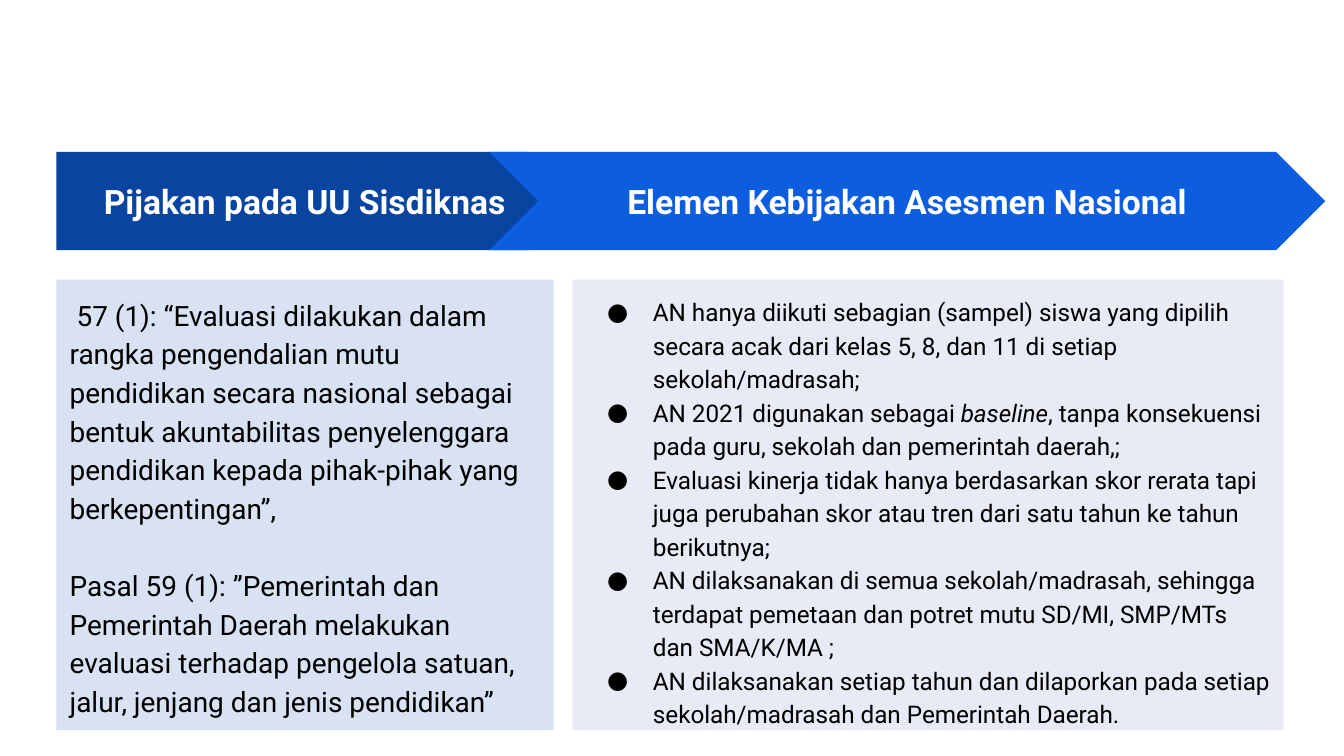
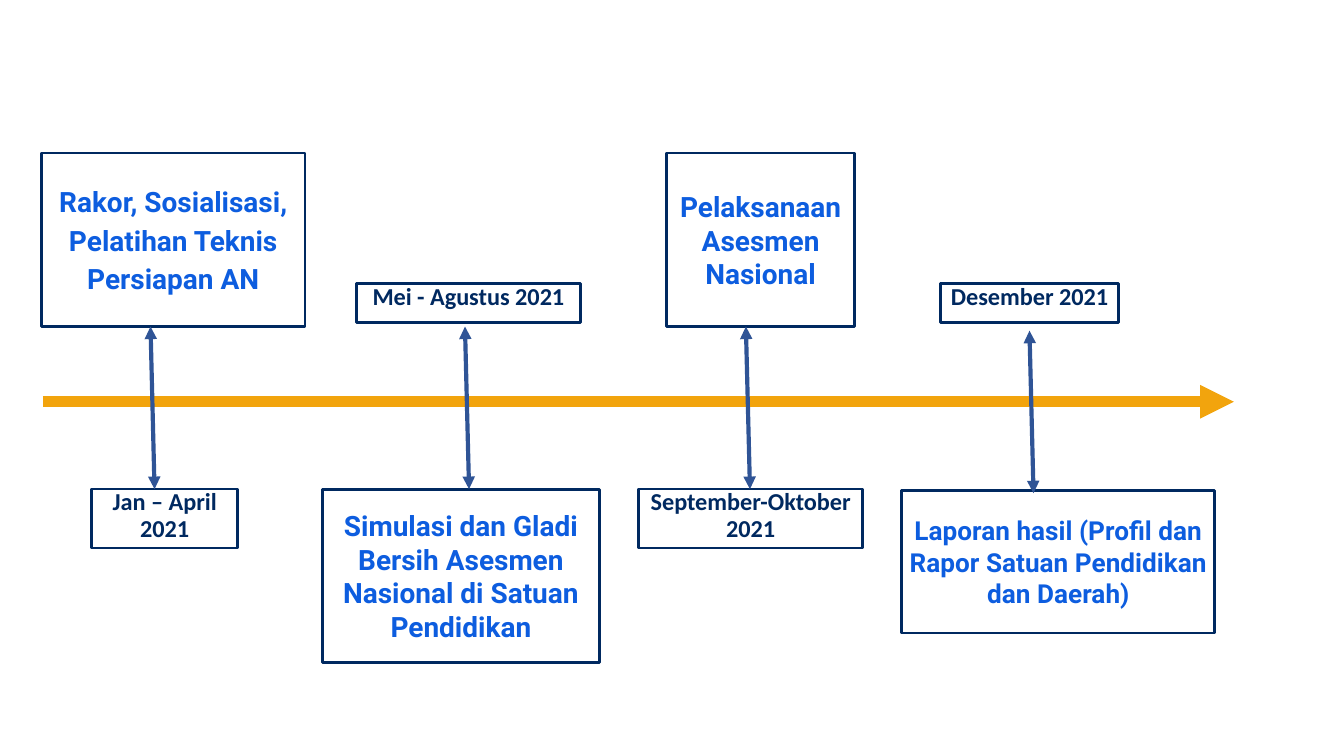
import lxml.etree
import pptx
import pptx.dml.color
import pptx.enum.shapes
import pptx.enum.text
import pptx.oxml.ns
import pptx.util

RGB = pptx.dml.color.RGBColor
WHITE = RGB(0xFF, 0xFF, 0xFF)
BLACK = RGB(0x00, 0x00, 0x00)
BLUE = RGB(0x0D, 0x5D, 0xDF)
DARK_BLUE = RGB(0x09, 0x44, 0xA1)
PALE_BLUE = RGB(0xD8, 0xE2, 0xF3)
PALE_LILAC = RGB(0xE8, 0xEB, 0xF5)
NAVY = RGB(0x00, 0x29, 0x60)
STEEL = RGB(0x2F, 0x54, 0x96)
AMBER = RGB(0xF2, 0xA4, 0x0D)

SHAPE = pptx.enum.shapes.MSO_SHAPE
ALIGN = pptx.enum.text.PP_ALIGN
ANCHOR = pptx.enum.text.MSO_ANCHOR
Pt = pptx.util.Pt
qn = pptx.oxml.ns.qn

prs = pptx.Presentation()
prs.slide_width = pptx.util.Inches(10)
prs.slide_height = prs.slide_width * 9 // 16
blank = prs.slide_layouts[6]

# All positions are in hundredths of the slide's width and height
COL = prs.slide_width / 100
ROW = prs.slide_height / 100


def add_box(s, kind, at, text, size, color, font="Roboto", bold=True, fill=None,
            line=None, inset=0.0, anchor=ANCHOR.MIDDLE, align=ALIGN.CENTER,
            spacing=None, before=0):
    """Add a shape with text; words between asterisks are italic."""
    x, y, w, h = at
    sp = s.shapes.add_shape(kind, round(x * COL), round(y * ROW),
                            round(w * COL), round(h * ROW))
    sp.shadow.inherit = False
    if fill is None:
        sp.fill.background()
    else:
        sp.fill.solid()
        sp.fill.fore_color.rgb = fill
    if line is None:
        sp.line.fill.background()
    else:
        sp.line.color.rgb = line
        sp.line.width = Pt(1.5)
    tf = sp.text_frame
    tf.word_wrap = True
    tf.vertical_anchor = anchor
    tf.margin_left = tf.margin_right = pptx.util.Inches(inset)
    tf.margin_top = tf.margin_bottom = pptx.util.Inches(inset)
    for i, content in enumerate(text.split("\n")):
        p = tf.add_paragraph() if i else tf.paragraphs[0]
        p.alignment = align
        if spacing:
            p.line_spacing = spacing
        if i and before:
            p.space_before = Pt(before)
        for j, part in enumerate(content.split("*")):
            r = p.add_run()
            r.text = part
            r.font.name = font
            r.font.size = Pt(size)
            r.font.bold = bold
            r.font.italic = j % 2 == 1
            r.font.color.rgb = color
    return sp


def add_arrow(s, x1, y1, x2, y2, color, width, ends):
    cn = s.shapes.add_connector(pptx.enum.shapes.MSO_CONNECTOR.STRAIGHT,
                                round(x1 * COL), round(y1 * ROW),
                                round(x2 * COL), round(y2 * ROW))
    cn.line.color.rgb = color
    cn.line.width = Pt(width)
    ln = cn.line._get_or_add_ln()
    for end in ends:
        lxml.etree.SubElement(ln, qn("a:" + end), type="triangle")
    lxml.etree.SubElement(cn._element.spPr, qn("a:effectLst"))


# Slide 1: legal basis and policy elements
s = prs.slides.add_slide(blank)
banners = [
    (SHAPE.PENTAGON, 4.2, 38.8, DARK_BLUE, "Pijakan pada UU Sisdiknas"),
    (SHAPE.CHEVRON, 36.4, 62.2, BLUE, "Elemen Kebijakan Asesmen Nasional"),
]
for kind, x, w, fill, text in banners:
    add_box(s, kind, (x, 20.1, w, 13), text, 18, WHITE, fill=fill, inset=0.1)

law = (
    " 57 (1): “Evaluasi dilakukan dalam rangka pengendalian mutu pendidikan secara "
    "nasional sebagai bentuk akuntabilitas penyelenggara pendidikan kepada "
    "pihak-pihak yang berkepentingan”,\n"
    "Pasal 59 (1): ”Pemerintah dan Pemerintah Daerah melakukan evaluasi terhadap "
    "pengelola satuan, jalur, jenjang dan jenis pendidikan”"
)
policy = "\n".join([
    "AN hanya diikuti sebagian (sampel) siswa yang dipilih secara acak dari kelas "
    "5, 8, dan 11 di setiap sekolah/madrasah;",
    "AN 2021 digunakan sebagai *baseline*, tanpa konsekuensi pada guru, sekolah "
    "dan pemerintah daerah,;",
    "Evaluasi kinerja tidak hanya berdasarkan skor rerata tapi juga perubahan skor "
    "atau tren dari satu tahun ke tahun berikutnya;",
    "AN dilaksanakan di semua sekolah/madrasah, sehingga terdapat pemetaan dan "
    "potret mutu SD/MI, SMP/MTs dan SMA/K/MA ;",
    "AN dilaksanakan setiap tahun dan dilaporkan pada setiap sekolah/madrasah dan "
    "Pemerintah Daerah.",
])
panels = [
    (4.2, 37, PALE_BLUE, law, 15, 20.7),
    (42.6, 52.9, PALE_LILAC, policy, 13, 0),
]
for x, w, fill, text, size, before in panels:
    sp = add_box(s, SHAPE.RECTANGLE, (x, 37, w, 59.6), text, size, BLACK, bold=False,
                 fill=fill, inset=0.1, anchor=ANCHOR.TOP, align=ALIGN.LEFT,
                 spacing=1.15, before=before)

# Bullets of the policy panel, the last one added
for p in sp.text_frame.paragraphs:
    pPr = p._p.get_or_add_pPr()
    pPr.set("marL", str(pptx.util.Inches(0.5)))
    pPr.set("indent", str(-pptx.util.Inches(0.34)))
    clr = lxml.etree.SubElement(pPr, qn("a:buClr"))
    lxml.etree.SubElement(clr, qn("a:srgbClr"), val=str(BLACK))
    lxml.etree.SubElement(pPr, qn("a:buFont"), typeface="Roboto")
    lxml.etree.SubElement(pPr, qn("a:buChar"), char="●")

# Slide 2: timeline
s = prs.slides.add_slide(blank)
add_arrow(s, 3.2, 53.15, 91.8, 53.15, AMBER, 6, ["tailEnd"])

# Each step: task, its box, text size, date, its box, top of the arrow
steps = [
    ("Rakor, Sosialisasi,\nPelatihan Teknis\nPersiapan AN",
     (3.1, 20.25, 19.6, 22.95), 15,
     "Jan – April 2021", (6.8, 64.7, 10.9, 7.8), (11.2, 43.2)),
    ("Simulasi dan Gladi Bersih Asesmen Nasional di Satuan Pendidikan",
     (24, 64.7, 20.6, 22.95), 15,
     "Mei - Agustus 2021", (26.5, 37.5, 16.7, 5.15), (34.6, 43.2)),
    ("Pelaksanaan Asesmen Nasional",
     (49.6, 20.25, 14, 22.95), 15,
     "September-Oktober 2021", (47.5, 64.7, 16.7, 7.8), (55.5, 43.2)),
    ("Laporan hasil (Profil dan Rapor Satuan Pendidikan dan Daerah)",
     (67.1, 64.9, 23.3, 18.85), 14,
     "Desember 2021", (70, 37.5, 13.2, 5.15), (76.6, 43.75)),
]
for task, task_at, size, date, date_at, (x, y) in steps:
    add_box(s, SHAPE.RECTANGLE, task_at, task, size, BLUE, line=NAVY, before=2.7)
    add_box(s, SHAPE.RECTANGLE, date_at, date, 13, NAVY, font="Calibri", line=NAVY,
            anchor=ANCHOR.TOP, spacing=0.93)
    add_arrow(s, x, y, x + 0.3, y + 21.5, STEEL, 2.25, ["headEnd", "tailEnd"])

prs.save("out.pptx")
